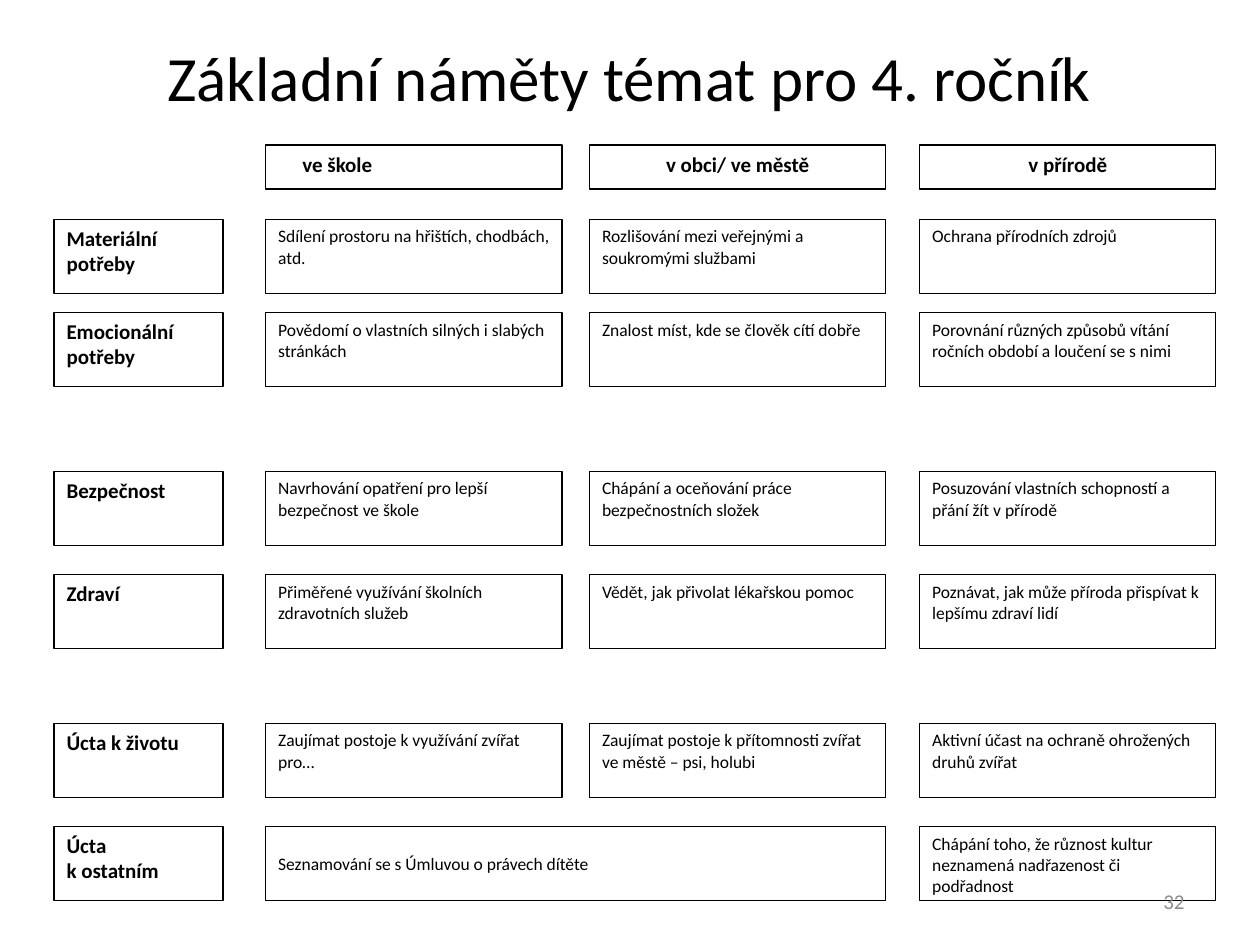
from pptx import Presentation
from pptx.dml.color import RGBColor
from pptx.enum.shapes import MSO_SHAPE
from pptx.enum.text import MSO_ANCHOR, PP_ALIGN
from pptx.util import Inches, Pt

RECTANGLE = MSO_SHAPE.RECTANGLE
TOP, MIDDLE = MSO_ANCHOR.TOP, MSO_ANCHOR.MIDDLE
LEFT, CENTER, RIGHT, JUSTIFY = PP_ALIGN.LEFT, PP_ALIGN.CENTER, PP_ALIGN.RIGHT, PP_ALIGN.JUSTIFY


def write(box, lines, size, align=LEFT, anchor=TOP, bold=False, color="000000"):
    frame = box.text_frame
    frame.word_wrap = True
    frame.vertical_anchor = anchor
    for number, line in enumerate(lines):
        para = frame.add_paragraph() if number else frame.paragraphs[0]
        para.alignment = align
        span = para.add_run()
        span.text = line
        span.font.name = "Calibri"
        span.font.size = Pt(size)
        span.font.bold = bold
        span.font.color.rgb = RGBColor.from_string(color)


def add_cell(left, top, width, height, lines, size, **style):
    box = page.shapes.add_shape(RECTANGLE, Inches(left), Inches(top), Inches(width), Inches(height))
    box.shadow.inherit = False
    box.fill.solid()
    box.fill.fore_color.rgb = RGBColor.from_string("FFFFFF")
    box.line.color.rgb = RGBColor.from_string("000000")
    box.line.width = Pt(0.75)
    write(box, lines, size, **style)
    return box


deck = Presentation()
deck.slide_width, deck.slide_height = Inches(10), Inches(7.5)
page = deck.slides.add_slide(deck.slide_layouts[6])

label_left, label_width = 0.43, 1.34
column_lefts, column_width = [2.11, 4.68, 7.3], 2.35
header_top, header_height, row_height = 1.15, 0.35, 0.59

title = page.shapes.add_textbox(Inches(0.27), Inches(0.3), Inches(9.45), Inches(0.61))
write(title, ["Základní náměty témat pro 4. ročník"], 36, CENTER, MIDDLE)

headers = [("ve škole", LEFT, 0.29), ("v obci/ ve městě", CENTER, 0.1), ("v přírodě", CENTER, 0.1)]
for left, (heading, align, margin) in zip(column_lefts, headers):
    header = add_cell(left, header_top, column_width, header_height, [heading], 12, align=align, bold=True)
    header.text_frame.margin_left = Inches(margin)

rows = [
    (1.74, ["Materiální potřeby"], [
        "Sdílení prostoru na hřištích, chodbách, atd.",
        "Rozlišování mezi veřejnými a soukromými službami",
        "Ochrana přírodních zdrojů"]),
    (2.48, ["Emocionální potřeby"], [
        "Povědomí o vlastních silných i slabých stránkách",
        "Znalost míst, kde se člověk cítí dobře",
        "Porovnání různých způsobů vítání ročních období a loučení se s nimi"]),
    (3.74, ["Bezpečnost"], [
        "Navrhování opatření pro lepší bezpečnost ve škole",
        "Chápání a oceňování práce bezpečnostních složek",
        "Posuzování vlastních schopností a přání žít v přírodě"]),
    (4.56, ["Zdraví"], [
        "Přiměřené využívání školních zdravotních služeb",
        "Vědět, jak přivolat lékařskou pomoc",
        "Poznávat, jak může příroda přispívat k lepšímu zdraví lidí"]),
    (5.74, ["Úcta k životu"], [
        "Zaujímat postoje k využívání zvířat pro…",
        "Zaujímat postoje k přítomnosti zvířat ve městě – psi, holubi",
        "Aktivní účast na ochraně ohrožených druhů zvířat"]),
    (6.56, ["Úcta ", "k ostatním"], [
        "Seznamování se s Úmluvou o právech dítěte",
        None,
        "Chápání toho, že různost kultur neznamená nadřazenost či podřadnost"]),
]
for top, label, topics in rows:
    add_cell(label_left, top, label_width, row_height, label, 12, align=JUSTIFY, bold=True)
    for column, (left, topic) in enumerate(zip(column_lefts, topics)):
        if topic is None:
            continue
        merged = column == 0 and topics[1] is None
        width = column_lefts[1] + column_width - left if merged else column_width
        add_cell(left, top, width, row_height, [topic], 10, anchor=MIDDLE if merged else TOP)

page_number = page.shapes.add_textbox(Inches(7.17), Inches(6.95), Inches(2.33), Inches(0.4))
write(page_number, ["32"], 12, RIGHT, MIDDLE, color="8C8C8C")

deck.save("out.pptx")
